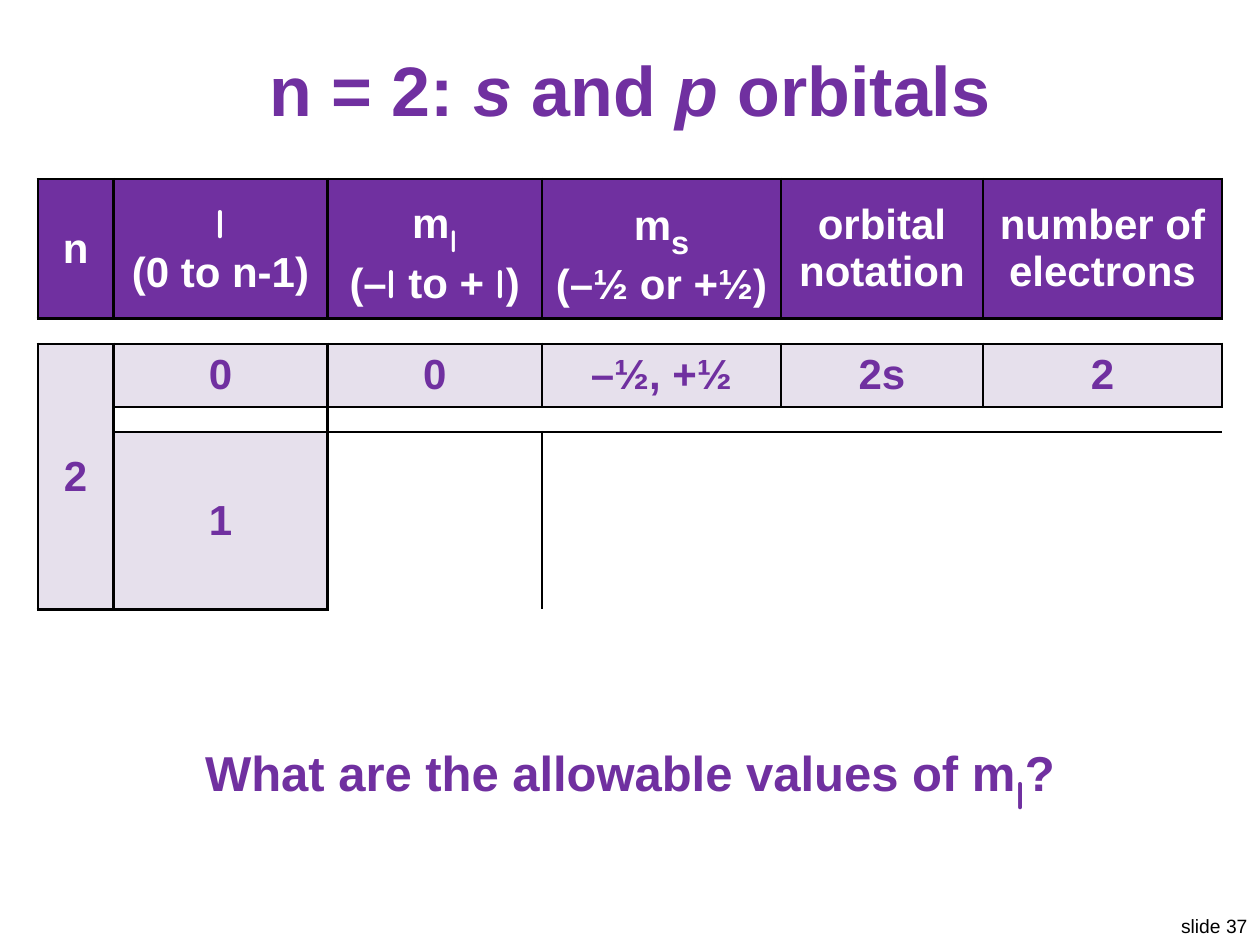
from lxml import etree
from pptx import Presentation
from pptx.dml.color import RGBColor
from pptx.enum.text import MSO_ANCHOR, PP_ALIGN
from pptx.oxml.ns import qn
from pptx.util import Inches, Pt

MIDDLE, TOP = MSO_ANCHOR.MIDDLE, MSO_ANCHOR.TOP
CENTER, RIGHT = PP_ALIGN.CENTER, PP_ALIGN.RIGHT
HUE = {"main": "7030A0", "pale": "E6E0EC", "white": "FFFFFF", "black": "000000"}
BARE = "{2D5ABB26-0587-4C30-8999-92F81FD0307C}"  # table style without grid or fill
ELL = ("l", {"name": "Comic Neue"})


def write(frame, lines, size, hue, bold=True, align=CENTER):
    """Each line is a list of pieces: a string, or a string with its own font."""
    for i, line in enumerate(lines):
        para = frame.add_paragraph() if i else frame.paragraphs[0]
        para.alignment = align
        font = para.font
        font.name, font.size, font.bold = "Arial", Pt(size), bold
        font.color.rgb = RGBColor.from_string(HUE[hue])
        for piece in line:
            text, look = (piece, {}) if isinstance(piece, str) else piece
            run = para.add_run()
            run.text = text
            for key, value in look.items():
                if key == "base":
                    run.font._element.set("baseline", str(value * 1000))
                else:
                    setattr(run.font, key, value)


def label(left, top, width, height, line, size, hue, anchor=TOP, wrap=False, **more):
    box = slide.shapes.add_textbox(*map(Inches, (left, top, width, height)))
    frame = box.text_frame
    frame.word_wrap, frame.vertical_anchor = wrap, anchor
    write(frame, [line], size, hue, **more)


deck = Presentation()
deck.slide_width, deck.slide_height = Inches(10), Inches(7.5)
slide = deck.slides.add_slide(deck.slide_layouts[6])

# Slide number and title
label(9.25, 7.21, 0.75, 0.29, ["slide 37"], 11, "black", bold=False, align=RIGHT)
slant = {"italic": True}
label(0.2, 0.3, 9.6, 0.8, ["n = 2:", (" s", slant), " and ", ("p", slant), " orbitals"],
      40, "main", anchor=MIDDLE, wrap=True)

# Table content by row and column
sub = {"size": Pt(32), "base": -25}
heads = [
    [["n"]],
    [[ELL], ["(0 to n-1)"]],
    [["m", ("l", {**ELL[1], **sub})], ["(–", ELL, " to + ", ELL, ")"]],
    [["m", ("s", sub)], ["(–½ or +½)"]],
    [["orbital notation"]],
    [["number of electrons"]],
]
cells = {(0, c): head for c, head in enumerate(heads)}
for c, text in enumerate(["2", "0", "0", "–½, +½", "2s", "2"]):
    cells[2, c] = [[text]]
cells[4, 1] = [["1"]]
spans = {(2, 0): 5, (4, 1): 3}
full = set(cells) | {(r + i, c) for (r, c), n in spans.items() for i in range(n)}

# Table grid
cols = [0.6, 1.7, 1.7, 1.9, 1.6, 1.9]
rows = [1.06, 0.2, 0.47, 0.2, 0.47, 0.47, 0.47]
table = slide.shapes.add_table(len(rows), len(cols), Inches(0.3), Inches(1.42),
                               Inches(sum(cols)), Inches(sum(rows))).table
table.first_row = table.horz_banding = False
table._tbl.tblPr.find(qn("a:tableStyleId")).text = BARE
for col, width in zip(table.columns, cols):
    col.width = Inches(width)
for row, height in zip(table.rows, rows):
    row.height = Inches(height)
for (r, c), n in spans.items():
    table.cell(r, c).merge(table.cell(r + n - 1, c))

# Cells: a side is ruled when the cell or its neighbour is filled
sides = {"L": (0, -1), "R": (0, 1), "T": (-1, 0), "B": (1, 0)}
for r in range(len(rows)):
    for c in range(len(cols)):
        cell = table.cell(r, c)
        props = cell._tc.get_or_add_tcPr()
        for side, (down, over) in sides.items():
            if (r, c) in full or (r + down, c + over) in full:
                rule = etree.SubElement(props, qn("a:ln" + side), w=str(Pt(1.5)))
                paint = etree.SubElement(rule, qn("a:solidFill"))
                etree.SubElement(paint, qn("a:srgbClr"), val=HUE["black"])
        cell.margin_left = cell.margin_right = Inches(0.05)
        cell.vertical_anchor = MIDDLE
        if (r, c) in full:
            cell.fill.solid()
            cell.fill.fore_color.rgb = RGBColor.from_string(HUE["pale" if r else "main"])
        else:
            cell.fill.background()
            cell.margin_top = cell.margin_bottom = 0
        lines = cells.get((r, c))
        write(cell.text_frame, lines or [[]], 24 if lines else 4, "main" if r else "white")

# Question
label(1.46, 5.68, 7.08, 0.57,
      ["What are the allowable values of m",
       ("l", {**ELL[1], "size": Pt(40), "base": -25}), "?"], 28, "main")

deck.save("out.pptx")
